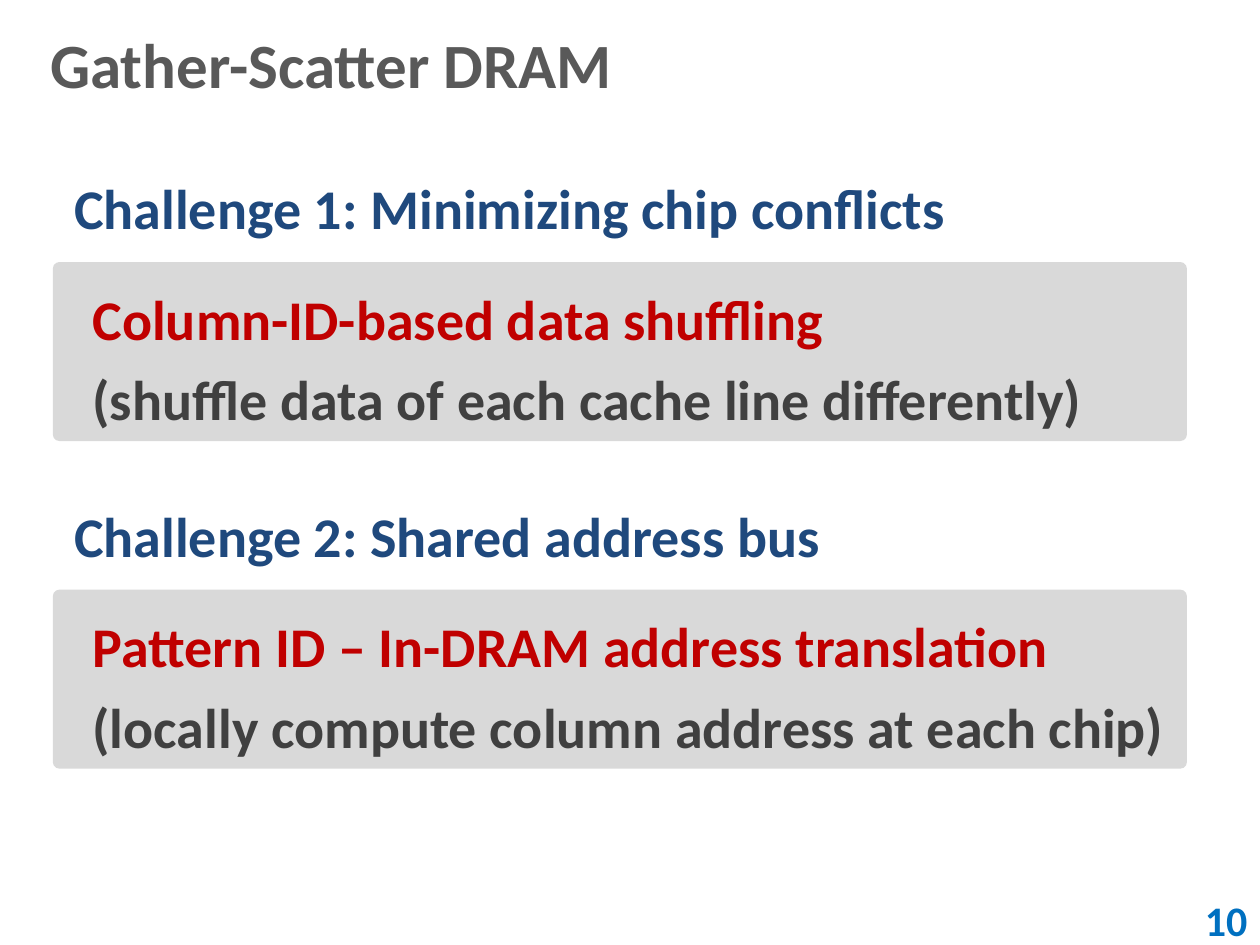
"""Build the Gather-Scatter DRAM slide with two challenges and their solutions."""
from pptx import Presentation
from pptx.dml.color import RGBColor
from pptx.enum import shapes, text
from pptx.util import Inches, Pt

WHITE = RGBColor(0xFF, 0xFF, 0xFF)
PANEL_GRAY = RGBColor(0xD9, 0xD9, 0xD9)
TITLE_GRAY = RGBColor(0x59, 0x59, 0x59)
DARK_GRAY = RGBColor(0x40, 0x40, 0x40)
NAVY = RGBColor(0x1F, 0x49, 0x7D)
RED = RGBColor(0xC0, 0x00, 0x00)
BLUE = RGBColor(0x00, 0x70, 0xC0)

TITLE = "Gather-Scatter DRAM"
PAGE_NUMBER = "10"
CHALLENGES = [
    ("Challenge 1: Minimizing chip conflicts", 7.18,
     "Column-ID-based data shuffling",
     "(shuffle data of each cache line differently)"),
    ("Challenge 2: Shared address bus", 6.17,
     "Pattern ID – In-DRAM address translation",
     "(locally compute column address at each chip)"),
]
FIRST_TOP = 1.33
CHALLENGE_STEP = 2.6
PANEL_OFFSET = 0.75


def write_text(shape, lines, size=32, align=text.PP_ALIGN.LEFT, left_inset=0.1,
               anchor=text.MSO_ANCHOR.MIDDLE, spacing=1.0, wrap=True):
    """Fill a shape with (wording, colour) lines."""
    frame = shape.text_frame
    frame.word_wrap = wrap
    frame.vertical_anchor = anchor
    frame.margin_left = Inches(left_inset)
    for index, (wording, color) in enumerate(lines):
        paragraph = frame.add_paragraph() if index else frame.paragraphs[0]
        paragraph.alignment = align
        paragraph.line_spacing = spacing
        run = paragraph.add_run()
        run.text = wording
        run.font.name = "Calibri"
        run.font.size = Pt(size)
        run.font.bold = True
        run.font.color.rgb = color


def add_box(slide, kind, position, fill):
    """Add a filled shape without outline or shadow."""
    shape = slide.shapes.add_shape(kind, *map(Inches, position))
    shape.shadow.inherit = False
    shape.fill.solid()
    shape.fill.fore_color.rgb = fill
    shape.line.fill.background()
    return shape


def add_challenge(slide, top, heading, width, solution, detail):
    """Add a challenge heading and the panel with its solution."""
    panel = add_box(slide, shapes.MSO_SHAPE.ROUNDED_RECTANGLE,
                    (0.42, top + PANEL_OFFSET, 9, 1.42), PANEL_GRAY)
    panel.adjustments[0] = 0.036
    write_text(panel, [(solution, RED), (detail, DARK_GRAY)],
               left_inset=0.3, spacing=1.2)
    label = slide.shapes.add_textbox(*map(Inches, (0.49, top, width, 0.64)))
    write_text(label, [(heading, NAVY)], anchor=text.MSO_ANCHOR.TOP, wrap=False)
    label.text_frame.auto_size = text.MSO_AUTO_SIZE.SHAPE_TO_FIT_TEXT


def main():
    """Assemble and save the slide."""
    presentation = Presentation()
    presentation.slide_width = Inches(10)
    presentation.slide_height = Inches(7.5)
    slide = presentation.slides.add_slide(presentation.slide_layouts[6])

    title = slide.shapes.add_textbox(0, 0, Inches(10), Inches(1))
    write_text(title, [(TITLE, TITLE_GRAY)], size=36, left_inset=0.4)
    number = add_box(slide, shapes.MSO_SHAPE.RECTANGLE, (8, 7.1, 2, 0.4), WHITE)
    write_text(number, [(PAGE_NUMBER, BLUE)], size=24, align=text.PP_ALIGN.RIGHT)
    for index, challenge in enumerate(CHALLENGES):
        add_challenge(slide, FIRST_TOP + index * CHALLENGE_STEP, *challenge)

    presentation.save("out.pptx")


if __name__ == "__main__":
    main()
